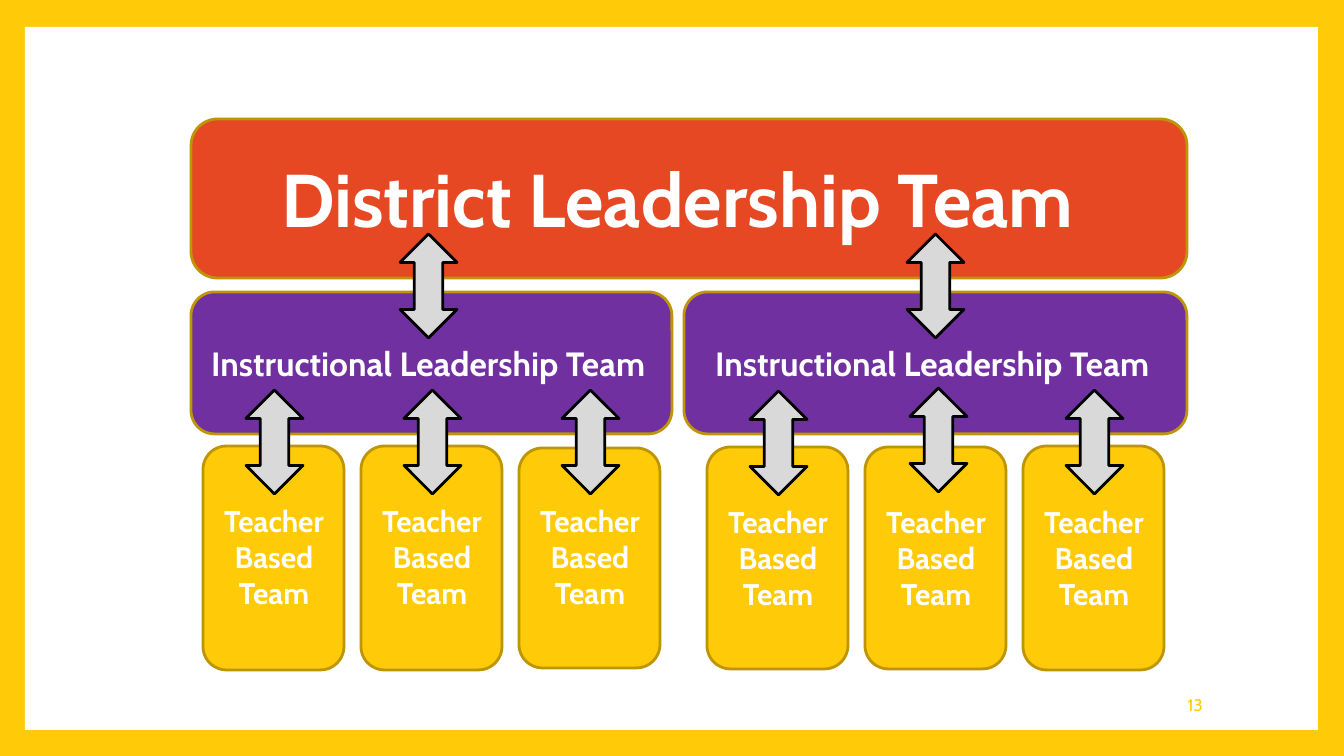
"""Build a slide showing how district, instructional and teacher teams connect."""
import pptx
import pptx.dml.color
import pptx.enum.shapes
import pptx.enum.text
import pptx.util

SHAPE = pptx.enum.shapes.MSO_SHAPE
ALIGN = pptx.enum.text.PP_ALIGN
ANCHOR = pptx.enum.text.MSO_ANCHOR

THEME = {
    "font": "Cabin", "gold": "FFCA08", "edge": "BD9506", "white": "FFFFFF",
    "district": "E64823", "instructional": "7030A0", "arrow": "D9D9D9", "black": "000000",
    "line": 1.5, "title": 40, "heading": 18, "body": 16, "number": 9,
}
DISTRICT = "District Leadership Team"
INSTRUCTIONAL = "Instructional Leadership Team"
TEACHER = "Teacher Based Team"
NUMBER = "13"

GROUPS = [
    {"band": (191, 481), "label": 198, "arrow": 400, "first": 203, "text_top": 496,
     "cards": [(446, 43, 390), (446, 43, 390), (448, 43, 390)]},
    {"band": (684, 503), "label": 702, "arrow": 907, "first": 707, "text_top": 497,
     "cards": [(447, 43, 391), (447, 45, 388), (446, 43, 390)]},
]
CARD_W, CARD_PITCH, CARD_MIDDLE = 141, 158, 558
ARROW_W, ARROW_H = 57, 104


def px(n):
    return pptx.util.Emu(round(n * 914400 / 134.4))


def color(name):
    return pptx.dml.color.RGBColor.from_string(THEME[name])


def add_box(s, kind, box, fill, line=None):
    sp = s.shapes.add_shape(kind, *map(px, box))
    sp.shadow.inherit = False
    sp.fill.solid()
    sp.fill.fore_color.rgb = color(fill)
    if line:
        sp.line.color.rgb = color(line)
        sp.line.width = pptx.util.Pt(THEME["line"])
    else:
        sp.line.fill.background()


def add_arrow(s, x, y):
    add_box(s, SHAPE.UP_DOWN_ARROW, (x, y, ARROW_W, ARROW_H), "arrow", "black")


def write(sp, text, size, align, fill="white", bold=True, anchor=ANCHOR.TOP):
    tf = sp.text_frame
    tf.text = text
    tf.word_wrap = True
    tf.auto_size = pptx.enum.text.MSO_AUTO_SIZE.NONE
    tf.vertical_anchor = anchor
    p = tf.paragraphs[0]
    p.alignment = align
    font = p.runs[0].font
    font.name, font.size, font.bold = THEME["font"], pptx.util.Pt(THEME[size]), bold
    font.color.rgb = color(fill)


def add_text(s, box, *args, **kwargs):
    write(s.shapes.add_textbox(*map(px, box)), *args, **kwargs)


def main():
    prs = pptx.Presentation()
    prs.slide_width, prs.slide_height = px(1344), px(756)
    s = prs.slides.add_slide(prs.slide_layouts[5])
    s.background.fill.solid()
    s.background.fill.fore_color.rgb = color("gold")

    add_box(s, SHAPE.RECTANGLE, (25, 27, 1293, 703), "white")
    add_text(s, (1028, 685, 188, 40), NUMBER, "number", ALIGN.RIGHT, "gold", False, ANCHOR.MIDDLE)
    add_box(s, SHAPE.ROUNDED_RECTANGLE, (191, 119, 996, 159), "district", "edge")

    title = s.shapes.title
    title.left, title.top, title.width, title.height = map(px, (203, 146, 949, 103))
    write(title, DISTRICT, "title", ALIGN.CENTER)
    s.shapes.element.append(title.element)

    for group in GROUPS:
        left, width = group["band"]
        add_box(s, SHAPE.ROUNDED_RECTANGLE, (left, 292, width, 142), "instructional", "edge")
        add_text(s, (group["label"], 336, 469, 54), INSTRUCTIONAL, "heading", ALIGN.LEFT)
        add_arrow(s, group["arrow"], 234)
        for i, (top, arrow_dx, arrow_top) in enumerate(group["cards"]):
            x = group["first"] + i * CARD_PITCH
            box = (x, top, CARD_W, 2 * (CARD_MIDDLE - top))
            add_box(s, SHAPE.ROUNDED_RECTANGLE, box, "gold", "edge")
            add_text(s, (x + 4, group["text_top"], 134, 122), TEACHER, "body", ALIGN.CENTER)
            add_arrow(s, x + arrow_dx, arrow_top)

    prs.save("out.pptx")


if __name__ == "__main__":
    main()
